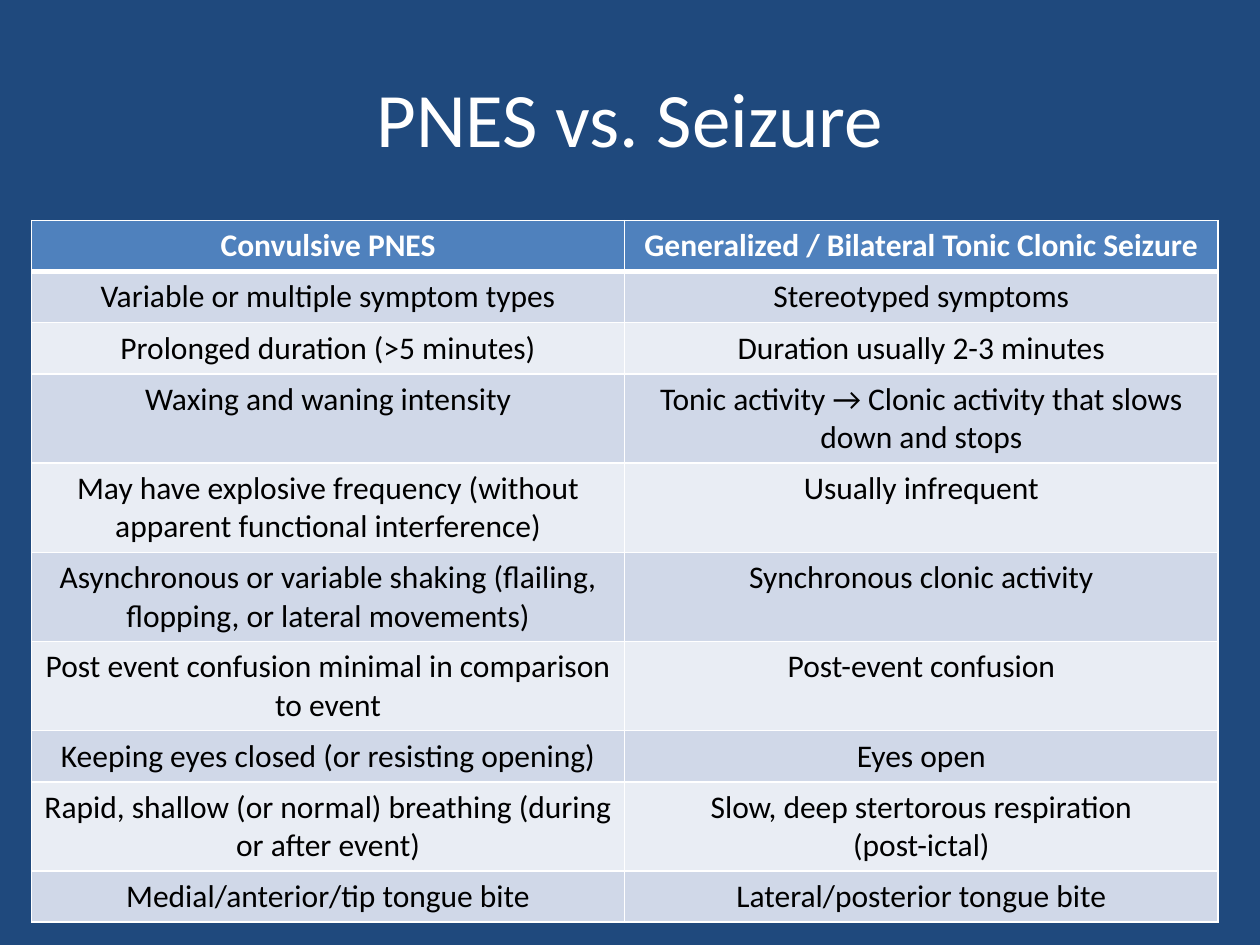
from dataclasses import dataclass

from lxml.etree import SubElement as Sub
from pptx import Presentation
from pptx.dml.color import RGBColor as RGB
from pptx.enum.text import MSO_ANCHOR as Anchor, PP_ALIGN as Align
from pptx.oxml.ns import qn
from pptx.util import Pt


@dataclass(frozen=True)
class Theme:
    back: str = "1F497D"
    head: str = "4F81BD"
    bands: tuple = ("D0D8E8", "E9EDF4")
    white: str = "FFFFFF"
    ink: str = "000000"
    font: str = "Calibri"
    title: int = 44
    body: int = 18


THEME = Theme()

ROWS = [
    ("Convulsive PNES", "Generalized / Bilateral Tonic Clonic Seizure"),
    ("Variable or multiple symptom types", "Stereotyped symptoms"),
    ("Prolonged duration (>5 minutes)", "Duration usually 2-3 minutes"),
    ("Waxing and waning intensity",
     "Tonic activity → Clonic activity that slows down and stops"),
    ("May have explosive frequency (without apparent functional interference)",
     "Usually infrequent"),
    ("Asynchronous or variable shaking (flailing, flopping, or lateral movements)",
     "Synchronous clonic activity"),
    ("Post event confusion minimal in comparison to event",
     "Post-event confusion"),
    ("Keeping eyes closed (or resisting opening)", "Eyes open"),
    ("Rapid, shallow (or normal) breathing (during or after event)",
     "Slow, deep stertorous respiration\n(post-ictal)"),
    ("Medial/anterior/tip tongue bite", "Lateral/posterior tongue bite"),
]
LINE_MAX = 45  # characters that fit on one line of a cell
ROW_ONE, ROW_TWO = 29.2, 51


def style(frame, size, color, bold=False):
    for para in frame.paragraphs:
        para.alignment = Align.CENTER
        for run in para.runs:
            font = run.font
            font.name, font.size, font.bold = THEME.font, Pt(size), bold
            font.color.rgb = RGB.from_string(color)


def add_title(slide, box, text):
    frame = slide.shapes.add_textbox(*map(Pt, box)).text_frame
    frame.word_wrap = True
    frame.vertical_anchor = Anchor.MIDDLE
    frame.text = text
    style(frame, THEME.title, THEME.white)


def set_edges(cell, top, bottom):
    props = cell._tc.get_or_add_tcPr()
    for side, width in (("L", 1), ("R", 1), ("T", top), ("B", bottom)):
        line = Sub(props, qn(f"a:ln{side}"), w=str(Pt(width)))
        Sub(Sub(line, qn("a:solidFill")), qn("a:srgbClr"), val=THEME.white)


def add_grid(slide, box, rows):
    left, top, width = box
    cols = len(rows[0])
    highs = [ROW_TWO if max(map(len, row)) > LINE_MAX else ROW_ONE
             for row in rows]
    table = slide.shapes.add_table(
        len(rows), cols, Pt(left), Pt(top), Pt(width), Pt(sum(highs))).table
    for col in table.columns:
        col.width = Pt(width / cols)

    for i, row in enumerate(rows):
        table.rows[i].height = Pt(highs[i])
        head = i == 0
        fill = THEME.head if head else THEME.bands[(i - 1) % 2]
        color = THEME.white if head else THEME.ink
        for j, text in enumerate(row):
            cell = table.cell(i, j)
            cell.text_frame.text = text
            style(cell.text_frame, THEME.body, color, bold=head)
            # Heavy rule between the heading and the first row
            set_edges(cell, 3 if i == 1 else 1, 3 if head else 1)
            cell.fill.solid()
            cell.fill.fore_color.rgb = RGB.from_string(fill)


def main():
    deck = Presentation()
    deck.slide_width, deck.slide_height = Pt(720), Pt(540)
    slide = deck.slides.add_slide(deck.slide_layouts[6])
    back = slide.background.fill
    back.solid()
    back.fore_color.rgb = RGB.from_string(THEME.back)

    # Heading
    add_title(slide, (36, 21.6, 648, 90), "PNES vs. Seizure")
    # Comparison table
    add_grid(slide, (18, 126, 678), ROWS)

    deck.save("out.pptx")


if __name__ == "__main__":
    main()
